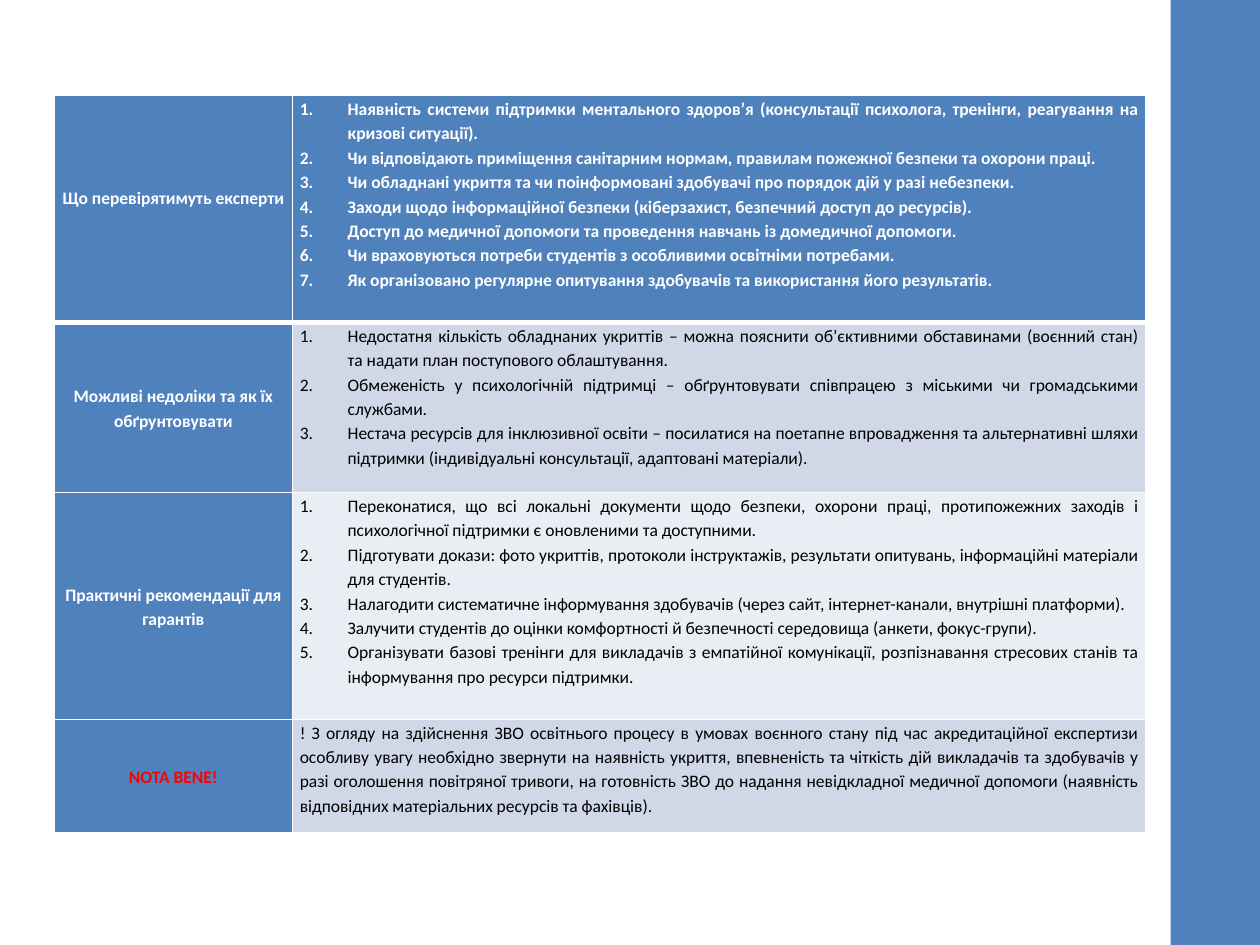
"""Builds the slide with the table on safety and support in the educational environment."""
from lxml import etree
from pptx import Presentation
from pptx.dml.color import RGBColor
from pptx.enum.shapes import MSO_SHAPE
from pptx.enum.text import MSO_ANCHOR, PP_ALIGN
from pptx.oxml.ns import qn
from pptx.util import Inches, Pt

RECTANGLE = MSO_SHAPE.RECTANGLE
TOP, MIDDLE = MSO_ANCHOR.TOP, MSO_ANCHOR.MIDDLE
CENTER, JUSTIFY = PP_ALIGN.CENTER, PP_ALIGN.JUSTIFY

COLORS = {
    "blue": "4F81BD",
    "band": "D0D8E8",
    "light_band": "E9EDF4",
    "white": "FFFFFF",
    "black": "000000",
    "red": "FF0000",
}
COLUMN_WIDTHS = (1.89, 6.77)
HEADER_BORDER, BORDER = 3, 1

SECTIONS = [
    {
        "label": "Що перевірятимуть експерти",
        "height": 1.8, "band": "blue", "text": "white", "bold": True, "label_lift": 0.19,
        "items": [
            "Наявність системи підтримки ментального здоров’я (консультації психолога, тренінги, реагування на кризові ситуації).",
            "Чи відповідають приміщення санітарним нормам, правилам пожежної безпеки та охорони праці.",
            "Чи обладнані укриття та чи поінформовані здобувачі про порядок дій у разі небезпеки.",
            "Заходи щодо інформаційної безпеки (кіберзахист, безпечний доступ до ресурсів).",
            "Доступ до медичної допомоги та проведення навчань із домедичної допомоги.",
            "Чи враховуються потреби студентів з особливими освітніми потребами.",
            "Як організовано регулярне опитування здобувачів та використання його результатів.",
        ],
    },
    {
        "label": "Можливі недоліки та як їх обґрунтовувати",
        "height": 1.35, "band": "band",
        "items": [
            "Недостатня кількість обладнаних укриттів – можна пояснити об’єктивними обставинами (воєнний стан) та надати план поступового облаштування.",
            "Обмеженість у психологічній підтримці – обґрунтовувати співпрацею з міськими чи громадськими службами.",
            "Нестача ресурсів для інклюзивної освіти – посилатися на поетапне впровадження та альтернативні шляхи підтримки (індивідуальні консультації, адаптовані матеріали).",
        ],
    },
    {
        "label": "Практичні рекомендації для гарантів",
        "height": 1.8, "band": "light_band",
        "items": [
            "Переконатися, що всі локальні документи щодо безпеки, охорони праці, протипожежних заходів і психологічної підтримки є оновленими та доступними.",
            "Підготувати докази: фото укриттів, протоколи інструктажів, результати опитувань, інформаційні матеріали для студентів.",
            "Налагодити систематичне інформування здобувачів (через сайт, інтернет-канали, внутрішні платформи).",
            "Залучити студентів до оцінки комфортності й безпечності середовища (анкети, фокус-групи).",
            "Організувати базові тренінги для викладачів з емпатійної комунікації, розпізнавання стресових станів та інформування про ресурси підтримки.",
        ],
    },
    {
        "label": "NOTA BENE!", "label_color": "red",
        "height": 0.9, "band": "band", "numbered": False,
        "items": [
            "! З огляду на здійснення ЗВО освітнього процесу в умовах воєнного стану під час акредитаційної експертизи особливу увагу необхідно звернути на наявність укриття, впевненість та чіткість дій викладачів та здобувачів у разі оголошення повітряної тривоги, на готовність ЗВО до надання невідкладної медичної допомоги (наявність відповідних матеріальних ресурсів та фахівців).",
        ],
    },
]


def apply_format(target, values):
    """Set each named attribute of the target."""
    for name, value in values.items():
        setattr(target, name, value)


def paint(fill, color):
    """Give a fill one solid colour."""
    fill.solid()
    fill.fore_color.rgb = RGBColor.from_string(COLORS[color])


def add_borders(cell, top, bottom):
    """Draw white borders around a cell."""
    properties = cell._tc.get_or_add_tcPr()
    widths = {"a:lnL": BORDER, "a:lnR": BORDER, "a:lnT": top, "a:lnB": bottom}
    for position, (side, width) in enumerate(widths.items()):
        line = etree.Element(qn(side), w=str(Pt(width)))
        solid = etree.SubElement(line, qn("a:solidFill"))
        etree.SubElement(solid, qn("a:srgbClr"), val=COLORS["white"])
        properties.insert(position, line)


def number_paragraph(paragraph):
    """Turn a paragraph into an item of a numbered list."""
    properties = paragraph._p.get_or_add_pPr()
    properties.set("marL", str(Inches(0.38)))
    properties.set("indent", str(-Inches(0.38)))
    etree.SubElement(properties, qn("a:buAutoNum"), type="arabicPeriod")


def write_cell(cell, texts, color, bold, alignment, anchor, numbered=False, lift=0):
    """Write the paragraphs of a cell in one style."""
    apply_format(cell, {
        "margin_left": Inches(0.06), "margin_right": Inches(0.06),
        "margin_top": 0, "margin_bottom": Inches(lift), "vertical_anchor": anchor,
    })
    frame = cell.text_frame
    for index, text in enumerate(texts):
        paragraph = frame.add_paragraph() if index else frame.paragraphs[0]
        if numbered:
            number_paragraph(paragraph)
        apply_format(paragraph, {"alignment": alignment, "line_spacing": 1.15})
        run = paragraph.add_run()
        run.text = text
        apply_format(run.font, {"name": "Calibri", "size": Pt(10), "bold": bold})
        run.font.color.rgb = RGBColor.from_string(COLORS[color])


def add_sidebar(slide):
    """Add the blue strip along the right edge."""
    sidebar = slide.shapes.add_shape(
        RECTANGLE, Inches(9.29), 0, Inches(0.71), Inches(7.5))
    sidebar.shadow.inherit = False
    paint(sidebar.fill, "blue")
    sidebar.line.fill.background()


def add_guidance_table(slide):
    """Add the table with one row for each section."""
    heights = [section["height"] for section in SECTIONS]
    table = slide.shapes.add_table(
        len(SECTIONS), len(COLUMN_WIDTHS), Inches(0.43), Inches(0.76),
        Inches(sum(COLUMN_WIDTHS)), Inches(sum(heights))).table
    for column, width in zip(table.columns, COLUMN_WIDTHS):
        column.width = Inches(width)
    for index, (row, section) in enumerate(zip(table.rows, SECTIONS)):
        row.height = Inches(section["height"])
        label, details = row.cells
        write_cell(label, [section["label"]], section.get("label_color", "white"),
                   True, CENTER, MIDDLE, lift=section.get("label_lift", 0))
        write_cell(details, section["items"], section.get("text", "black"),
                   section.get("bold", False), JUSTIFY, TOP, section.get("numbered", True))
        for cell, color in ((label, "blue"), (details, section["band"])):
            paint(cell.fill, color)
            add_borders(cell, HEADER_BORDER if index == 1 else BORDER,
                        HEADER_BORDER if index == 0 else BORDER)


def main():
    """Build and save the slide."""
    presentation = Presentation()
    apply_format(presentation, {"slide_width": Inches(10), "slide_height": Inches(7.5)})
    slide = presentation.slides.add_slide(presentation.slide_layouts[6])
    add_sidebar(slide)
    add_guidance_table(slide)
    presentation.save("out.pptx")


if __name__ == "__main__":
    main()
